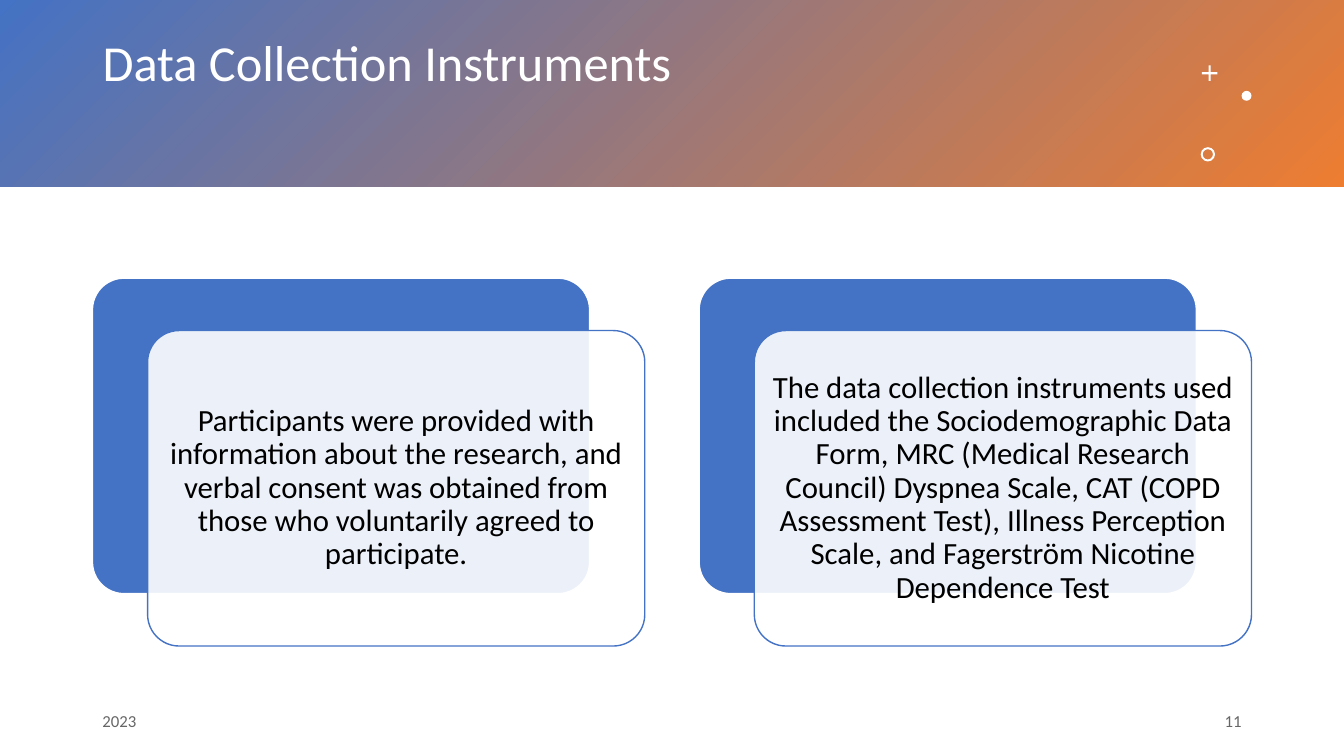
from pptx import Presentation
from pptx.dml.color import RGBColor
from pptx.enum.shapes import MSO_SHAPE
from pptx.enum.text import MSO_ANCHOR, MSO_AUTO_SIZE, PP_ALIGN
from pptx.oxml.ns import qn
from pptx.util import Cm, Pt
from lxml.etree import SubElement

BLUE = RGBColor(0x44, 0x72, 0xC4)
ORANGE = RGBColor(0xED, 0x7D, 0x31)
WHITE = RGBColor(0xFF, 0xFF, 0xFF)
BLACK = RGBColor(0, 0, 0)
FONT = "Calibri"
WIDE, HIGH = 33.87, 19.05
LEFT = 2.33

CARDS = [
    "Participants were provided with information about the research, and "
    "verbal consent was obtained from those who voluntarily agreed to "
    "participate.",
    "The data collection instruments used included the Sociodemographic "
    "Data Form, MRC (Medical Research Council) Dyspnea Scale, CAT (COPD "
    "Assessment Test), Illness Perception Scale, and Fagerström Nicotine "
    "Dependence Test",
]


def fade(fill, percent):
    """Make a solid fill partly transparent."""
    color = fill._xPr.find(qn("a:solidFill"))[0]
    SubElement(color, qn("a:alpha")).set("val", str(percent * 1000))


def add_box(slide, kind, x, y, w, h, color=None, line=None):
    box = slide.shapes.add_shape(kind, Cm(x), Cm(y), Cm(w), Cm(h))
    box.shadow.inherit = False
    if color is not None:
        box.fill.solid()
        box.fill.fore_color.rgb = color
    if line is None:
        box.line.fill.background()
    else:
        box.line.color.rgb = line
        box.line.width = Pt(1)
    return box


def write(frame, text, size, color, align, anchor=MSO_ANCHOR.MIDDLE):
    frame.word_wrap = True
    frame.auto_size = MSO_AUTO_SIZE.NONE
    frame.vertical_anchor = anchor
    para = frame.paragraphs[0]
    para.alignment = align
    run = para.add_run()
    run.text = text
    run.font.name = FONT
    run.font.size = Pt(size)
    run.font.color.rgb = color
    return para, run


def add_head(slide, x, y, w, h):
    # Gradient band behind the title
    band = add_box(slide, MSO_SHAPE.RECTANGLE, x, y, w, h)
    band.fill.gradient()
    band.fill.gradient_angle = 315
    for stop, color in zip(band.fill.gradient_stops, (BLUE, ORANGE)):
        stop.color.rgb = color

    # Title
    title = slide.shapes.title
    title._element.addprevious(band._element)
    title.left, title.top = Cm(x + LEFT), Cm(y + 0.84)
    title.width, title.height = Cm(27.3), Cm(3.02)
    para, _ = write(title.text_frame, "Data Collection Instruments", 36,
                    WHITE, PP_ALIGN.LEFT, MSO_ANCHOR.TOP)
    para.line_spacing = 0.9

    # Small marks: plus, dot and ring
    right = x + w
    plus = add_box(slide, MSO_SHAPE.CROSS, right - 3.58, y + 1.65,
                   0.39, 0.39, WHITE)
    plus.adjustments[0] = 0.43
    add_box(slide, MSO_SHAPE.OVAL, right - 2.58, y + 2.29, 0.25, 0.25, WHITE)
    ring = add_box(slide, MSO_SHAPE.DONUT, right - 3.61, y + 3.71,
                   0.36, 0.36, WHITE)
    ring.adjustments[0] = 0.14


def add_card(slide, text, x, y, w, h):
    # Solid back plate and pale front plate, same size, shifted
    dx, dy = 1.39, 1.32
    size = w - dx, h - dy
    kind = MSO_SHAPE.ROUNDED_RECTANGLE
    back = add_box(slide, kind, x, y, *size, BLUE, WHITE)
    front = add_box(slide, kind, x + dx, y + dy, *size, WHITE, BLUE)
    fade(front.fill, 90)
    for plate in (back, front):
        plate.adjustments[0] = 0.1

    frame = front.text_frame
    frame.margin_left = frame.margin_right = Cm(0.23)
    frame.margin_top = frame.margin_bottom = Cm(0.23)
    para, _ = write(frame, text, 22, BLACK, PP_ALIGN.CENTER)
    para.line_spacing = 0.9


def add_foot(slide, x, y, w, h):
    # Year on the left, page number on the right
    part = 7.62
    for text, left, align in (("2023", x, PP_ALIGN.LEFT),
                              ("11", x + w - part, PP_ALIGN.RIGHT)):
        box = slide.shapes.add_textbox(Cm(left), Cm(y), Cm(part), Cm(h))
        para, run = write(box.text_frame, text, 12, BLACK, align)
        para.space_after = Pt(6)
        fade(run.font.fill, 60)


def main():
    deck = Presentation()
    deck.slide_width, deck.slide_height = Cm(WIDE), Cm(HIGH)
    slide = deck.slides.add_slide(deck.slide_layouts[5])
    span = WIDE - 2 * LEFT

    add_head(slide, 0, 0, WIDE, 4.7)
    add_foot(slide, LEFT, 17.65, span, 1.02)

    # Two equal cards across the text width
    gap = 1.37
    wide = (span - gap) / 2
    for i, text in enumerate(CARDS):
        add_card(slide, text, LEFT + i * (wide + gap), 7.01, wide, 9.27)

    deck.save("out.pptx")


if __name__ == "__main__":
    main()
